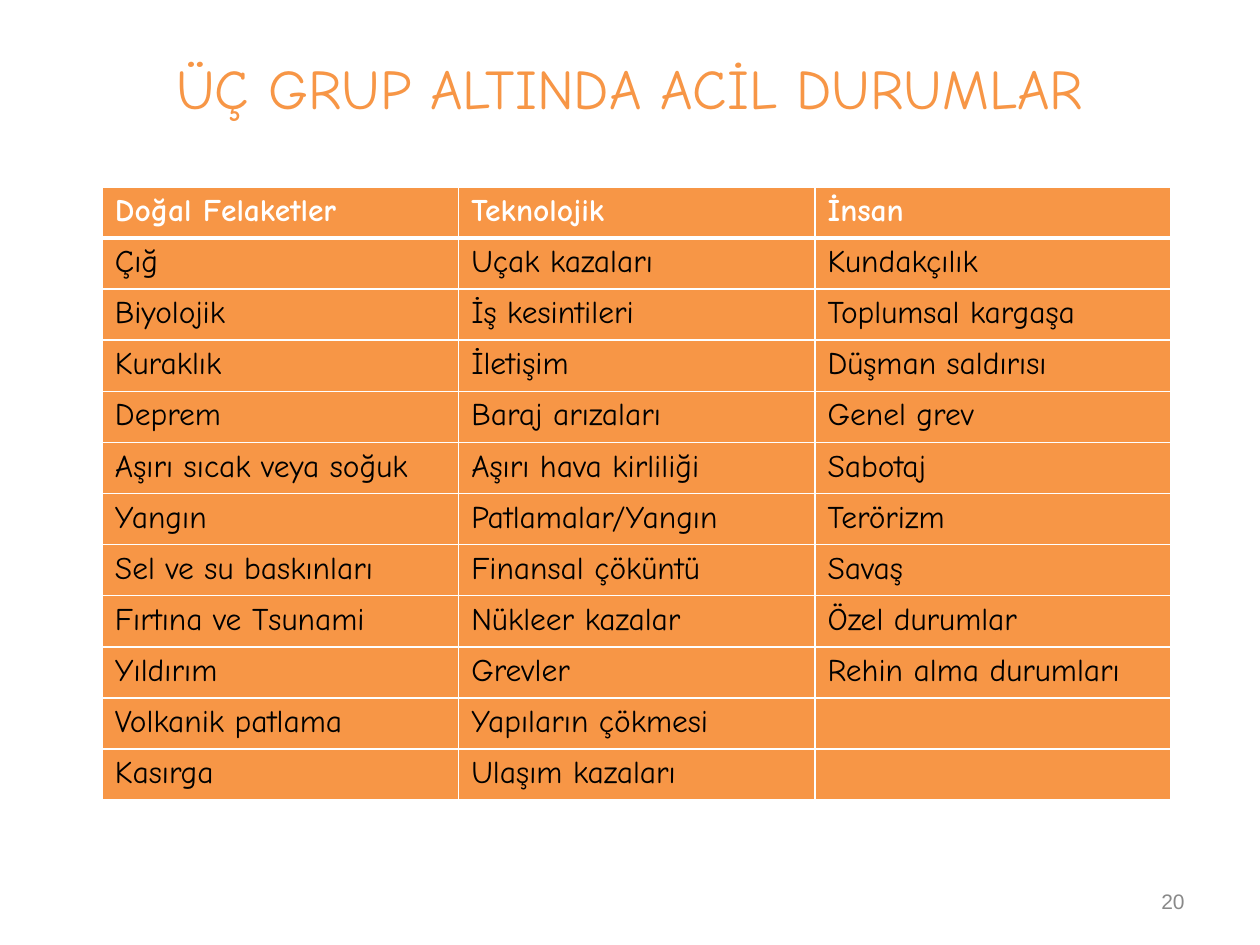
from itertools import zip_longest

from lxml import etree
from pptx import Presentation
from pptx.dml.color import RGBColor
from pptx.enum import text
from pptx.oxml.ns import qn
from pptx.util import Pt

COLORS = {"orange": "F79646", "white": "FFFFFF", "black": "000000", "gray": "898989"}
HEADING_FONT = "Comic Neue"

EMERGENCIES = {
    "Doğal Felaketler": [
        "Çığ", "Biyolojik", "Kuraklık", "Deprem", "Aşırı sıcak veya soğuk", "Yangın",
        "Sel ve su baskınları", "Fırtına ve Tsunami", "Yıldırım", "Volkanik patlama",
        "Kasırga"],
    "Teknolojik": [
        "Uçak kazaları", "İş kesintileri", "İletişim", "Baraj arızaları",
        "Aşırı hava kirliliği", "Patlamalar/Yangın", "Finansal çöküntü",
        "Nükleer kazalar", "Grevler", "Yapıların çökmesi", "Ulaşım kazaları"],
    "İnsan": [
        "Kundakçılık", "Toplumsal kargaşa", "Düşman saldırısı", "Genel grev", "Sabotaj",
        "Terörizm", "Savaş", "Özel durumlar", "Rehin alma durumları"],
}


def style_runs(paragraph, size, color, font=HEADING_FONT, bold=False):
    for run in paragraph.runs:
        run.font.size = Pt(size)
        run.font.name = font
        run.font.bold = bold
        run.font.color.rgb = RGBColor.from_string(COLORS[color])


def add_line_of_text(slide, box, wording, size, color, align, font=HEADING_FONT):
    frame = slide.shapes.add_textbox(*map(Pt, box)).text_frame
    frame.word_wrap = True
    frame.vertical_anchor = text.MSO_ANCHOR.MIDDLE
    frame.text = wording
    frame.paragraphs[0].alignment = align
    style_runs(frame.paragraphs[0], size, color, font)


def set_borders(cell, widths):
    """Draw white cell borders; widths maps L, R, T, B to points."""
    properties = cell._tc.get_or_add_tcPr()
    for side, width in widths.items():
        line = etree.SubElement(properties, qn(f"a:ln{side}"), w=str(Pt(width)))
        fill = etree.SubElement(line, qn("a:solidFill"))
        etree.SubElement(fill, qn("a:srgbClr"), val=COLORS["white"])


def add_emergency_table(slide, box):
    rows = [list(EMERGENCIES), *zip_longest(*EMERGENCIES.values(), fillvalue="")]
    left, top, width, height = box
    table = slide.shapes.add_table(
        len(rows), len(EMERGENCIES), Pt(left), Pt(top), Pt(width), Pt(height)).table
    table.horz_banding = False
    for column in table.columns:
        column.width = Pt(width / len(EMERGENCIES))

    for row_number, entries in enumerate(rows):
        table.rows[row_number].height = Pt(height / len(rows))
        is_header = row_number == 0
        # A heavier rule separates the header from the entries
        borders = {"L": 1, "R": 1,
                   "T": 3 if row_number == 1 else 1,
                   "B": 3 if is_header else 1}
        for column_number, entry in enumerate(entries):
            cell = table.cell(row_number, column_number)
            set_borders(cell, borders)
            cell.fill.solid()
            cell.fill.fore_color.rgb = RGBColor.from_string(COLORS["orange"])
            cell.text_frame.text = entry
            style_runs(cell.text_frame.paragraphs[0], 18,
                       "white" if is_header else "black", bold=is_header)


def main():
    deck = Presentation()
    deck.slide_width, deck.slide_height = Pt(720), Pt(540)
    slide = deck.slides.add_slide(deck.slide_layouts[6])

    # Title
    add_line_of_text(slide, (36, 21, 648, 57), "ÜÇ GRUP ALTINDA ACİL DURUMLAR",
                     32, "orange", text.PP_ALIGN.CENTER)
    # Three groups of emergencies
    add_emergency_table(slide, (58.5, 106.8, 610.8, 350.4))
    # Page number
    add_line_of_text(slide, (516, 500.5, 168, 28.8), "20",
                     12, "gray", text.PP_ALIGN.RIGHT, font="Arial")

    deck.save("out.pptx")


if __name__ == "__main__":
    main()
